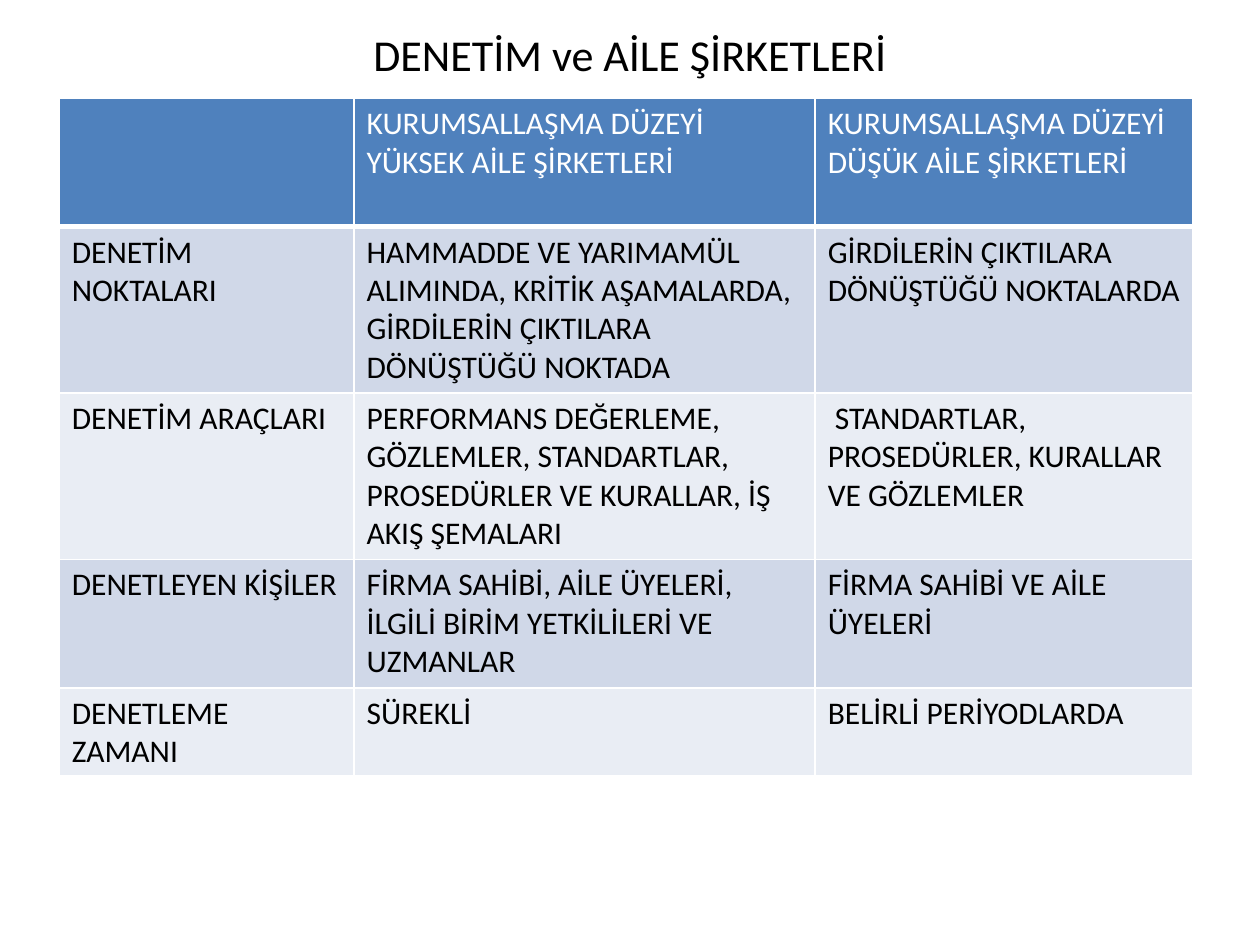
from lxml.etree import SubElement
from pptx import Presentation
from pptx.dml.color import RGBColor
from pptx.enum.text import MSO_ANCHOR, PP_ALIGN
from pptx.oxml.ns import qn
from pptx.util import Inches, Pt


def color(hex_value):
    return RGBColor.from_string(hex_value)


def add_run(paragraph, text, size, hex_value):
    run = paragraph.add_run()
    run.text = text
    run.font.name = "Calibri"
    run.font.size = Pt(size)
    run.font.bold = False
    run.font.color.rgb = color(hex_value)


prs = Presentation()
prs.slide_width, prs.slide_height = Inches(10), Inches(7.5)
slide = prs.slides.add_slide(prs.slide_layouts[6])

# Title
title = slide.shapes.add_textbox(Inches(0.5), Inches(0.23), Inches(9), Inches(0.39)).text_frame
title.word_wrap = True
title.vertical_anchor = MSO_ANCHOR.MIDDLE
title.paragraphs[0].alignment = PP_ALIGN.CENTER
add_run(title.paragraphs[0], "DENETİM ve AİLE ŞİRKETLERİ", 25.2, "000000")

# Comparison of audit by level of institutionalisation
comparison = [
    ("", "KURUMSALLAŞMA DÜZEYİ YÜKSEK AİLE ŞİRKETLERİ",
     "KURUMSALLAŞMA DÜZEYİ DÜŞÜK AİLE ŞİRKETLERİ"),
    ("DENETİM NOKTALARI",
     "HAMMADDE VE YARIMAMÜL ALIMINDA, KRİTİK AŞAMALARDA, GİRDİLERİN ÇIKTILARA DÖNÜŞTÜĞÜ NOKTADA",
     "GİRDİLERİN ÇIKTILARA DÖNÜŞTÜĞÜ NOKTALARDA"),
    ("DENETİM ARAÇLARI",
     "PERFORMANS DEĞERLEME, GÖZLEMLER, STANDARTLAR, PROSEDÜRLER VE KURALLAR, İŞ AKIŞ ŞEMALARI",
     " STANDARTLAR, PROSEDÜRLER, KURALLAR VE GÖZLEMLER"),
    ("DENETLEYEN KİŞİLER",
     "FİRMA SAHİBİ, AİLE ÜYELERİ, İLGİLİ BİRİM YETKİLİLERİ VE UZMANLAR",
     "FİRMA SAHİBİ VE AİLE ÜYELERİ"),
    ("DENETLEME ZAMANI", "SÜREKLİ", "BELİRLİ PERİYODLARDA"),
]
column_widths = [2.34, 3.66, 3]
row_heights = [1.02, 1.32, 1.32, 1.02, 0.41]

table = slide.shapes.add_table(
    len(row_heights), len(column_widths), Inches(0.47), Inches(0.78),
    Inches(sum(column_widths)), Inches(sum(row_heights))).table
for column, width in zip(table.columns, column_widths):
    column.width = Inches(width)
for row, height in zip(table.rows, row_heights):
    row.height = Inches(height)

for row_index, texts in enumerate(comparison):
    is_header = row_index == 0
    band = "4F81BD" if is_header else ("E9EDF4", "D0D8E8")[row_index % 2]
    for column_index, text in enumerate(texts):
        cell = table.cell(row_index, column_index)

        # White borders, heavier under the header
        properties = cell._tc.get_or_add_tcPr()
        for side in ("lnL", "lnR", "lnT", "lnB"):
            weight = 3 if is_header and side == "lnB" else 1
            border = SubElement(properties, qn(f"a:{side}"), w=str(Pt(weight)))
            SubElement(SubElement(border, qn("a:solidFill")), qn("a:srgbClr"), val="FFFFFF")

        cell.fill.solid()
        cell.fill.fore_color.rgb = color(band)
        if text:
            add_run(cell.text_frame.paragraphs[0], text, 18, "FFFFFF" if is_header else "000000")

prs.save("out.pptx")
